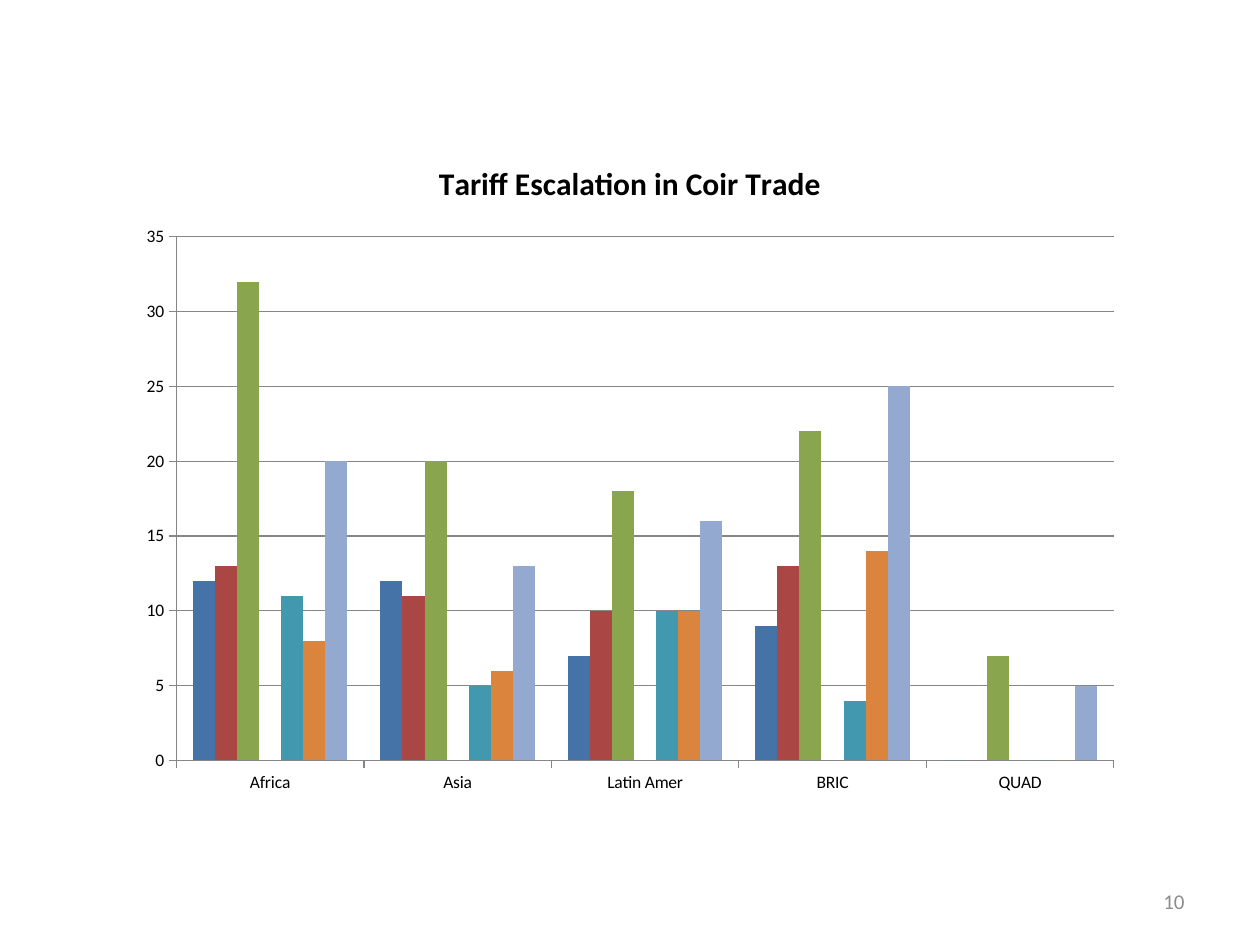
from lxml import etree
from pptx import Presentation
from pptx.chart.data import CategoryChartData
from pptx.dml.color import RGBColor
from pptx.enum.chart import XL_CHART_TYPE, XL_TICK_MARK
from pptx.enum.text import MSO_ANCHOR, PP_ALIGN
from pptx.oxml.ns import qn
from pptx.util import Inches, Pt

CLUSTERED = XL_CHART_TYPE.COLUMN_CLUSTERED
OUTSIDE = XL_TICK_MARK.OUTSIDE
MIDDLE = MSO_ANCHOR.MIDDLE
RIGHT = PP_ALIGN.RIGHT

FONT = "Calibri"
BLACK = RGBColor(0x00, 0x00, 0x00)
AXIS_GRAY = RGBColor(0x86, 0x86, 0x86)
NUMBER_GRAY = RGBColor(0x8C, 0x8C, 0x8C)
BLUE = RGBColor(0x45, 0x72, 0xA7)
RED = RGBColor(0xAA, 0x46, 0x43)
GREEN = RGBColor(0x89, 0xA5, 0x4E)
PURPLE = RGBColor(0x71, 0x58, 0x8F)
TEAL = RGBColor(0x41, 0x98, 0xAF)
ORANGE = RGBColor(0xDB, 0x84, 0x3D)
LIGHT_BLUE = RGBColor(0x93, 0xA9, 0xCF)

REGIONS = ["Africa", "Asia", "Latin Amer", "BRIC", "QUAD"]
TARIFFS = [
    (BLUE, [12, 12, 7, 9, 0]),
    (RED, [13, 11, 10, 13, 0]),
    (GREEN, [32, 20, 18, 22, 7]),
    (PURPLE, [None] * len(REGIONS)),  # empty series separates the two groups
    (TEAL, [11, 5, 10, 4, 0]),
    (ORANGE, [8, 6, 10, 14, 0]),
    (LIGHT_BLUE, [20, 13, 16, 25, 5]),
]


def style_font(font, size, color, bold=False):
    font.name = FONT
    font.size = Pt(size)
    font.bold = bold
    font.color.rgb = color


def style_line(line):
    line.color.rgb = AXIS_GRAY
    line.width = Pt(0.75)


def set_plot_layout(chart, x, y, w, h):
    """Place the inner plot area, in fractions of the chart box."""
    plot_area = chart._chartSpace.chart.plotArea
    for old in plot_area.findall(qn("c:layout")):
        plot_area.remove(old)
    layout = etree.Element(qn("c:layout"))
    manual = etree.SubElement(layout, qn("c:manualLayout"))
    settings = [("layoutTarget", "inner"), ("xMode", "edge"), ("yMode", "edge"),
                ("x", x), ("y", y), ("w", w), ("h", h)]
    for tag, value in settings:
        etree.SubElement(manual, qn(f"c:{tag}")).set("val", str(value))
    plot_area.insert(0, layout)


def add_tariff_chart(slide, left, top, width, height):
    data = CategoryChartData()
    data.categories = REGIONS
    for number, (_, values) in enumerate(TARIFFS, 1):
        data.add_series(f"Series {number}", values)
    chart = slide.shapes.add_chart(CLUSTERED, left, top, width, height, data).chart
    style_font(chart.font, 10, BLACK)
    chart.has_legend = False

    tf = chart.chart_title.text_frame
    tf.text = "Tariff Escalation in Coir Trade"
    style_font(tf.paragraphs[0].runs[0].font, 18, BLACK, bold=True)

    plot = chart.plots[0]
    plot.vary_by_categories = False
    plot.gap_width = 150
    plot.overlap = 0
    for series, (color, _) in zip(plot.series, TARIFFS):
        series.invert_if_negative = False
        series.format.fill.solid()
        series.format.fill.fore_color.rgb = color

    for axis in (chart.category_axis, chart.value_axis):
        axis.major_tick_mark = OUTSIDE
        style_line(axis.format.line)
    value_axis = chart.value_axis
    value_axis.minimum_scale = 0
    value_axis.maximum_scale = 35
    value_axis.major_unit = 5
    value_axis.has_major_gridlines = True
    style_line(value_axis.major_gridlines.format.line)
    set_plot_layout(chart, 0.05, 0.15, 0.93, 0.78)


def add_slide_number(slide, left, top, width, height):
    tf = slide.shapes.add_textbox(left, top, width, height).text_frame
    tf.word_wrap = True
    tf.vertical_anchor = MIDDLE
    p = tf.paragraphs[0]
    p.text = "10"
    p.alignment = RIGHT
    style_font(p.runs[0].font, 12, NUMBER_GRAY)


def main():
    prs = Presentation()
    prs.slide_width = Inches(10)
    prs.slide_height = Inches(7.5)
    slide = prs.slides.add_slide(prs.slide_layouts[6])
    add_tariff_chart(slide, Inches(1), Inches(1.08), Inches(8), Inches(5.33))
    add_slide_number(slide, Inches(7.17), Inches(6.95), Inches(2.33), Inches(0.4))
    prs.save("out.pptx")


if __name__ == "__main__":
    main()
